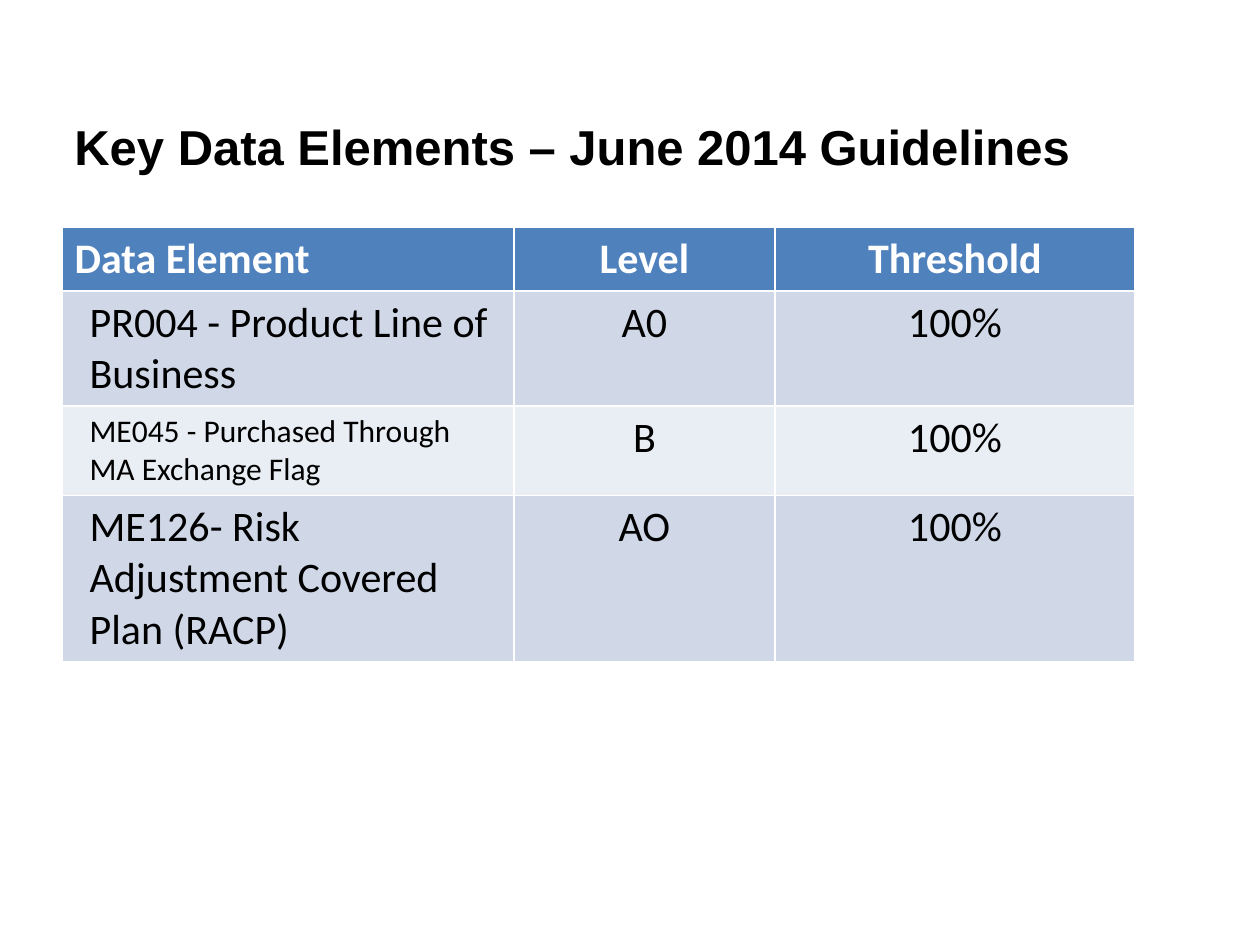
from pptx import Presentation
from pptx.dml.color import RGBColor
from pptx.enum.text import MSO_ANCHOR, PP_ALIGN
from pptx.util import Pt

PX = 914400 // 126
COLORS = {"header": "4F81BD", "odd": "D0D8E8", "even": "E9EDF4",
          "white": "FFFFFF", "black": "000000"}


def rgb(name):
    return RGBColor.from_string(COLORS[name])


def style_run(r, font, size, bold, color):
    r.font.name = font
    r.font.size = Pt(size)
    r.font.bold = bold
    r.font.color.rgb = rgb(color)


prs = Presentation()
prs.slide_width, prs.slide_height = 1260 * PX, 945 * PX
s = prs.slides.add_slide(prs.slide_layouts[6])

# Key data elements table; the default table style supplies the white borders
rows = [
    ("Data Element", "Level", "Threshold"),
    ("PR004 - Product Line of Business", "A0", "100%"),
    ("ME045 - Purchased Through MA Exchange Flag", "B", "100%"),
    ("ME126- Risk Adjustment Covered Plan (RACP)", "AO", "100%"),
]
col_widths = [452, 261, 360]
row_height = 52
small_row = 2
indent = 15

table = s.shapes.add_table(len(rows), len(col_widths), 62 * PX, 227 * PX,
                           sum(col_widths) * PX, len(rows) * row_height * PX).table
for col, width in zip(table.columns, col_widths):
    col.width = width * PX

for i, row in enumerate(rows):
    table.rows[i].height = row_height * PX
    header = i == 0
    fill = "header" if header else "odd" if i % 2 else "even"
    for j, text in enumerate(row):
        cell = table.cell(i, j)
        cell.fill.solid()
        cell.fill.fore_color.rgb = rgb(fill)
        p = cell.text_frame.paragraphs[0]
        p.text = text
        if j > 0:
            p.alignment = PP_ALIGN.CENTER
        elif not header:
            pPr = p._p.get_or_add_pPr()
            pPr.set("marL", str(indent * PX))
            pPr.set("indent", "0")
        size = 18 if (i, j) == (small_row, 0) else 24
        style_run(p.runs[0], "Calibri", size, header, "white" if header else "black")

# Title
sp = s.shapes.add_textbox(62 * PX, 102 * PX, 1108 * PX, 88 * PX)
tf = sp.text_frame
tf.word_wrap = True
tf.vertical_anchor = MSO_ANCHOR.MIDDLE
tf.text = "Key Data Elements – June 2014 Guidelines"
style_run(tf.paragraphs[0].runs[0], "Arial", 28, True, "black")

prs.save("out.pptx")
